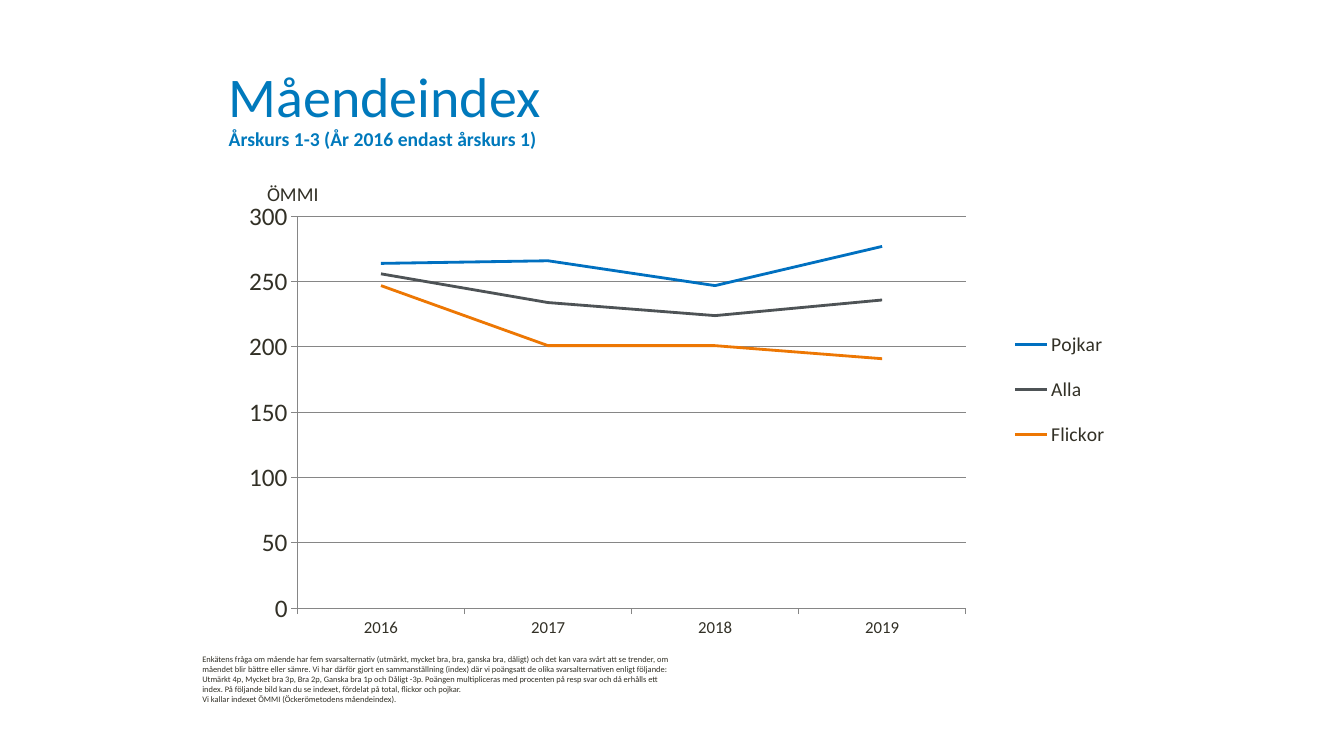
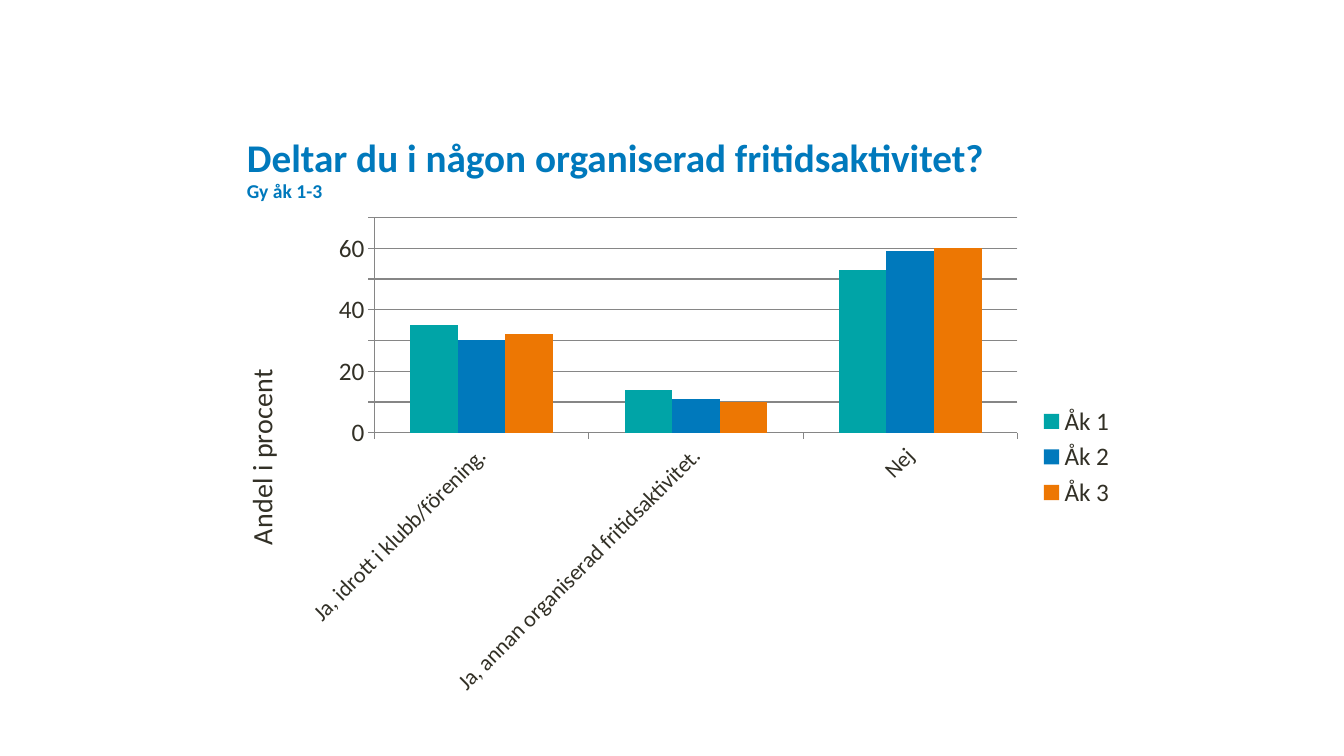
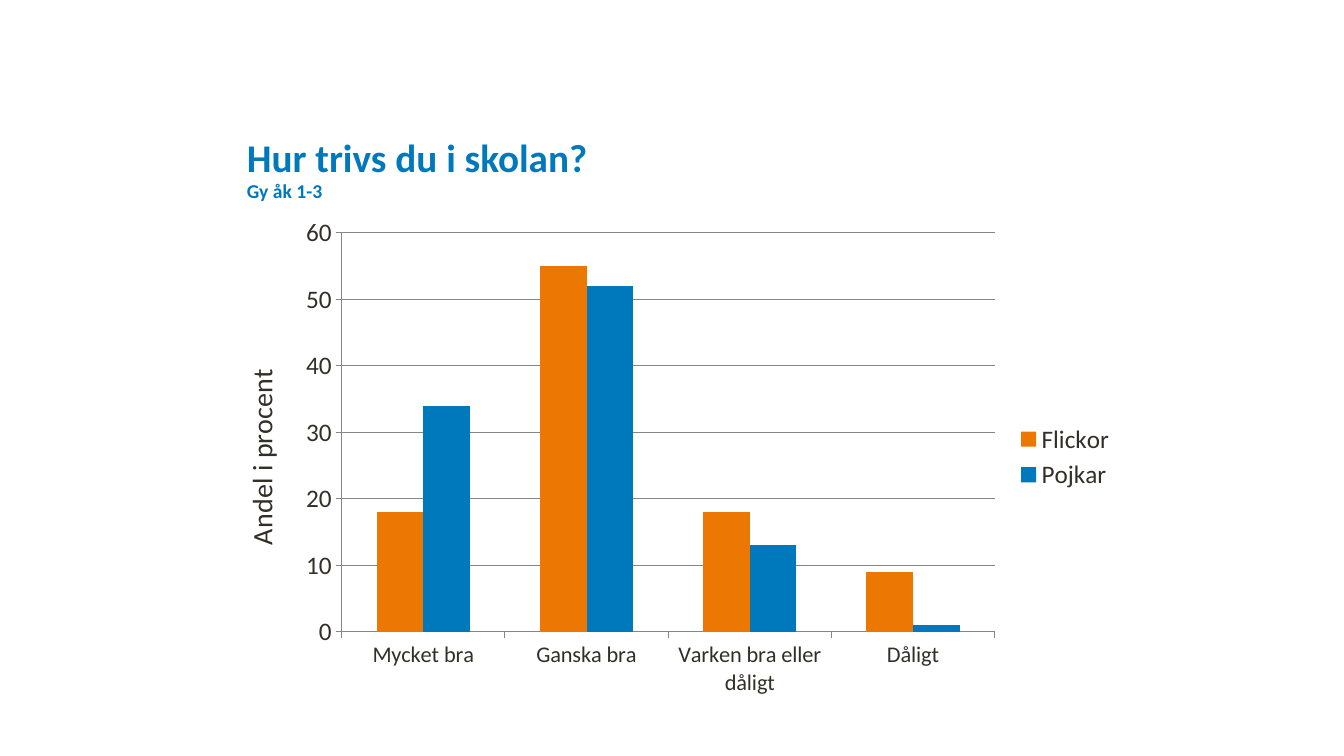
from dataclasses import dataclass

from pptx import Presentation
from pptx.chart.data import CategoryChartData
from pptx.dml.color import RGBColor as RGB
from pptx.enum.chart import XL_CHART_TYPE as CT, XL_LEGEND_POSITION as LP, XL_TICK_MARK as TM
from pptx.enum.text import MSO_ANCHOR as ANCHOR, MSO_AUTO_SIZE as AUTO, PP_ALIGN as ALIGN
from pptx.oxml import parse_xml
from pptx.oxml.ns import nsdecls
from pptx.util import Cm, Pt


@dataclass(frozen=True)
class Theme:
    font: str = "Calibri"
    title: RGB = RGB.from_string("0079BC")
    text: RGB = RGB.from_string("323026")
    grid: RGB = RGB.from_string("868686")
    blue: RGB = RGB.from_string("0070C0")
    grey: RGB = RGB.from_string("4E5356")
    orange: RGB = RGB.from_string("ED7703")
    teal: RGB = RGB.from_string("00A4A7")
    headline: Pt = Pt(40)
    question: Pt = Pt(28)
    axis_title: Pt = Pt(20)
    chart: Pt = Pt(18)
    category: Pt = Pt(16)
    small: Pt = Pt(14)
    year: Pt = Pt(12)
    note: Pt = Pt(6)


T = Theme()


def set_font(font, size, color=T.text, bold=False):
    for name, value in dict(name=T.font, size=size, bold=bold).items():
        setattr(font, name, value)
    font.color.rgb = color


def manual_layout(x, y, w, h, inner=False):
    parts = '<c:layoutTarget val="inner"/>' if inner else ""
    parts += '<c:xMode val="edge"/><c:yMode val="edge"/>'
    parts += "".join(f'<c:{k} val="{v}"/>' for k, v in dict(x=x, y=y, w=w, h=h).items())
    return parse_xml(f'<c:layout {nsdecls("c")}><c:manualLayout>{parts}</c:manualLayout></c:layout>')


# Slide contents
question = dict(
    kind=CT.COLUMN_CLUSTERED, subtitle="Gy åk 1-3", title_size=T.question, title_bold=True,
    title_box=(5.97, 2.49, 21.89, 2.74), chart_box=(5.51, 5.23, 22.86, 12.57),
    cat_size=T.category, legend_size=T.chart, step=10, axis_title="Andel i procent")
slides = [
    dict(kind=CT.LINE, title="Måendeindex", subtitle="Årskurs 1-3 (År 2016 endast årskurs 1)",
         title_size=T.headline, title_bold=False,
         title_box=(5.51, 1.02, 27.03, 2.9), chart_box=(4.65, 4.88, 23.72, 11.48),
         cat_size=T.year, legend_size=T.small, top=300, step=50,
         plot=(0.12, 0.05, 0.71, 0.86), legend=(0.87, 0.26, 0.12, 0.34),
         cats=["2016", "2017", "2018", "2019"],
         series=[("Pojkar", (264, 266, 247, 277), T.blue),
                 ("Alla", (256, 234, 224, 236), T.grey),
                 ("Flickor", (247, 201, 201, 191), T.orange)],
         notes=[((4.85, 16.36, 12.32, 1.55), T.note, [
             "Enkätens fråga om mående har fem svarsalternativ (utmärkt, mycket bra, bra, "
             "ganska bra, dåligt) och det kan vara svårt att se trender, om måendet blir "
             "bättre eller sämre. Vi har därför gjort en sammanställning (index) där vi "
             "poängsatt de olika svarsalternativen enligt följande: Utmärkt 4p, Mycket bra 3p, "
             "Bra 2p, Ganska bra 1p och Dåligt -3p. Poängen multipliceras med procenten på "
             "resp svar och då erhålls ett index. På följande bild kan du se indexet, "
             "fördelat på total, flickor och pojkar.",
             "Vi kallar indexet ÖMMI (Öckerömetodens måendeindex)."]),
             ((6.48, 4.47, 2.39, 0.86), T.small, ["ÖMMI"])]),
    dict(question, title="Deltar du i någon organiserad fritidsaktivitet?", top=70, slanted=True,
         cats=["Ja, idrott i klubb/förening.", "Ja, annan organiserad fritidsaktivitet.", "Nej"],
         series=[("Åk 1", (35, 14, 53), T.teal),
                 ("Åk 2", (30, 11, 59), T.title),
                 ("Åk 3", (32, 10, 60), T.orange)]),
    dict(question, title="Hur trivs du i skolan?", top=60,
         cats=["Mycket bra", "Ganska bra", "Varken bra eller dåligt", "Dåligt"],
         series=[("Flickor", (18, 55, 18, 9), T.orange),
                 ("Pojkar", (34, 52, 13, 1), T.title)]),
]

prs = Presentation()
prs.slide_width, prs.slide_height = Cm(33.87), Cm(19.05)

for d in slides:
    s = prs.slides.add_slide(prs.slide_layouts[5])

    # Title with subtitle on a second line
    sp = s.shapes.title
    sp.left, sp.top, sp.width, sp.height = map(Cm, d["title_box"])
    tf = sp.text_frame
    for name, value in dict(word_wrap=True, auto_size=AUTO.NONE,
                            vertical_anchor=ANCHOR.BOTTOM).items():
        setattr(tf, name, value)
    p = tf.paragraphs[0]
    p.alignment, p.line_spacing = ALIGN.LEFT, 0.9
    r = p.add_run()
    r.text = d["title"]
    set_font(r.font, d["title_size"], T.title, d["title_bold"])
    p.add_line_break()
    r = p.add_run()
    r.text = d["subtitle"]
    set_font(r.font, T.small, T.title, True)

    # Chart and its series
    data = CategoryChartData()
    data.categories = d["cats"]
    for name, values, _ in d["series"]:
        data.add_series(name, values)
    chart = s.shapes.add_chart(d["kind"], *map(Cm, d["chart_box"]), data).chart
    chart.has_title = False
    set_font(chart.font, T.chart)
    plot = chart.plots[0]
    plot.vary_by_categories = False
    for ser, (_, _, color) in zip(plot.series, d["series"]):
        if d["kind"] == CT.LINE:
            ser.smooth = False
            ser.format.line.color.rgb, ser.format.line.width = color, Pt(2)
        else:
            ser.format.fill.solid()
            ser.format.fill.fore_color.rgb = color
    if d["kind"] == CT.COLUMN_CLUSTERED:
        plot.gap_width, plot.overlap = 150, 0

    # Axes
    cat, val = chart.category_axis, chart.value_axis
    for axis, size in ((cat, d["cat_size"]), (val, T.chart)):
        axis.major_tick_mark, axis.minor_tick_mark = TM.OUTSIDE, TM.NONE
        axis.format.line.color.rgb = T.grid
        set_font(axis.tick_labels.font, size)
    for name, value in dict(minimum_scale=0, maximum_scale=d["top"], major_unit=d["step"],
                            has_major_gridlines=True).items():
        setattr(val, name, value)
    val.major_gridlines.format.line.color.rgb = T.grid
    if "slanted" in d:
        cat._element.txPr.bodyPr.set("rot", "-2700000")
    if "axis_title" in d:
        r = val.axis_title.text_frame.paragraphs[0].add_run()
        r.text = d["axis_title"]
        set_font(r.font, T.axis_title)

    # Legend
    chart.has_legend = True
    legend = chart.legend
    legend.position, legend.include_in_layout = LP.RIGHT, False
    set_font(legend.font, d["legend_size"])
    if "plot" in d:
        area = chart._chartSpace.chart.plotArea
        for old in area.xpath("c:layout"):
            area.remove(old)
        area.insert(0, manual_layout(*d["plot"], inner=True))
        for old in legend._element.xpath("c:layout"):
            legend._element.remove(old)
        legend._element.insert(1, manual_layout(*d["legend"]))

    # Free texts
    for box, size, lines in d.get("notes", []):
        tf = s.shapes.add_textbox(*map(Cm, box)).text_frame
        tf.word_wrap = True
        for i, line in enumerate(lines):
            p = tf.add_paragraph() if i else tf.paragraphs[0]
            r = p.add_run()
            r.text = line
            set_font(r.font, size)

prs.save("out.pptx")
